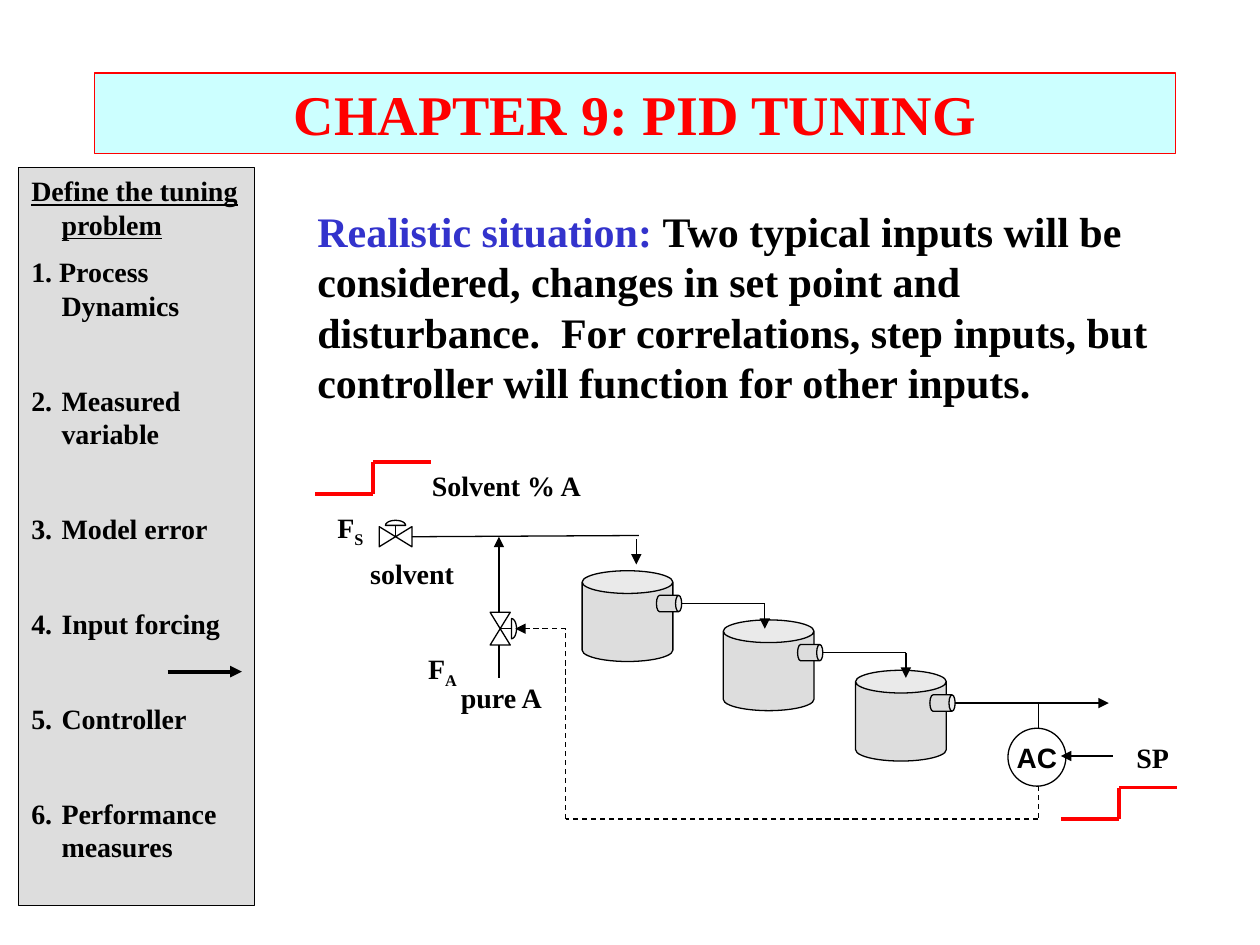
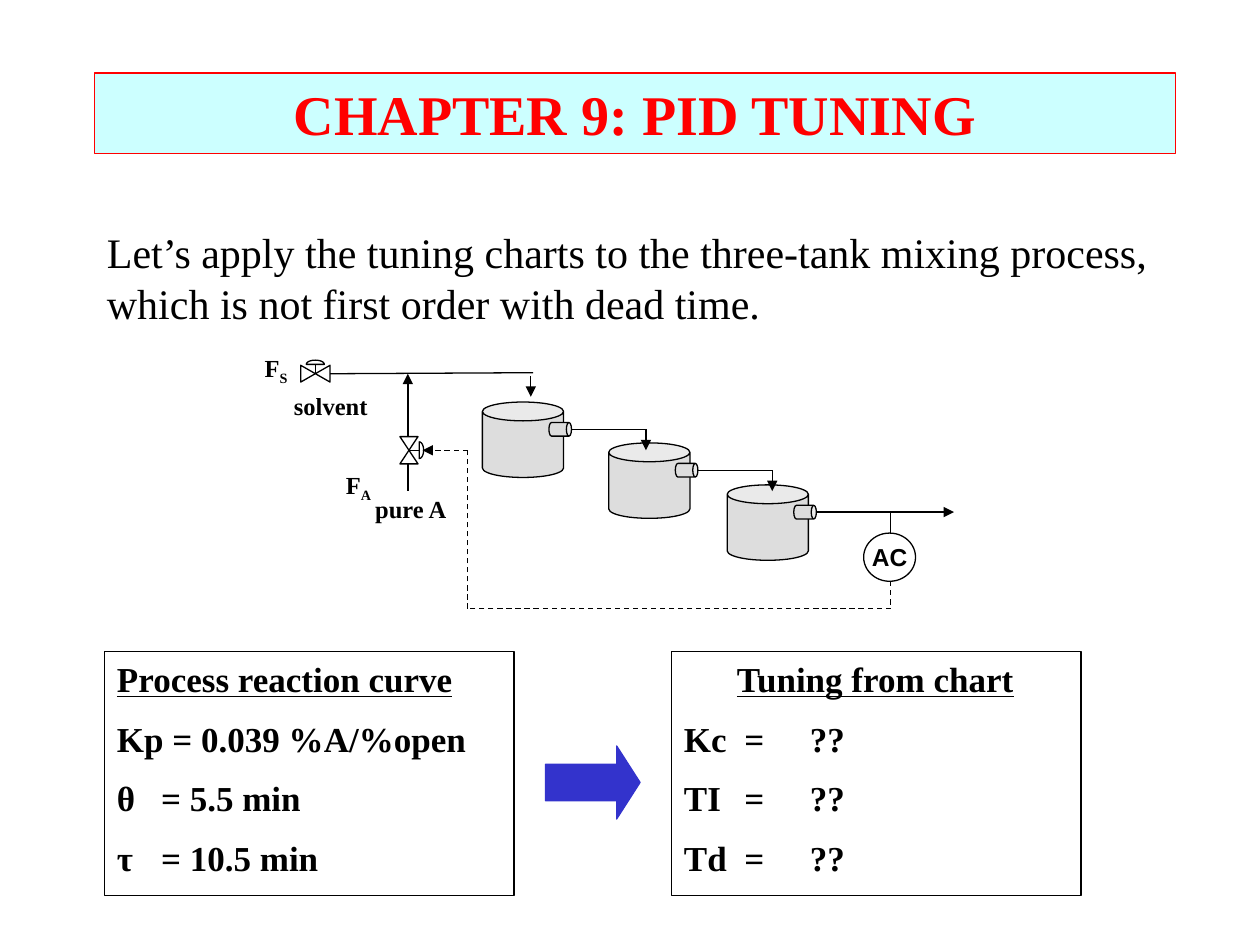
from dataclasses import dataclass
from itertools import pairwise
from math import cos, pi, sin

from lxml.etree import SubElement
from pptx import Presentation
from pptx.dml.color import RGBColor
from pptx.enum.dml import MSO_LINE
from pptx.enum.shapes import MSO_CONNECTOR, MSO_SHAPE as Shape
from pptx.enum.text import MSO_ANCHOR as Anchor, PP_ALIGN as Align
from pptx.oxml.ns import qn
from pptx.util import Inches, Pt

BLACK = RGBColor(0, 0, 0)
RED = RGBColor(0xFF, 0, 0)
BLUE = RGBColor(0x33, 0x33, 0xCC)
GREY = RGBColor(0xDD, 0xDD, 0xDD)
CYAN = RGBColor(0xCC, 0xFF, 0xFF)
SERIF, SANS = "Times New Roman", "Arial"
THIN, THICK = 0.75, 2.25


@dataclass
class Frame:
    """A rectangle of the slide, in inches, ruled into columns and rows."""
    left: float
    top: float
    width: float
    height: float
    columns: float
    rows: float

    def point(self, x, y):
        return (Inches(self.left + x * self.width / self.columns),
                Inches(self.top + y * self.height / self.rows))

    def size(self, width, height):
        return (Inches(width * self.width / self.columns),
                Inches(height * self.height / self.rows))


SHEET = Frame(0, 0, 10, 7.5, 10, 7.5)
PLANT_GRID = (6.5, 2.5)
TANK_SIDE = 0.72
TANKS = [(2.12, 0.53), (3.24, 0.92), (4.29, 1.32)]
OUTLET_END = (6.3, 1.58)
SIDEBAR_ITEMS = ["1. Process Dynamics", "2.\tMeasured variable", "3.\tModel error",
                 "4.\tInput forcing", "5.\tController", "6.\tPerformance measures"]


def style_line(line, color=BLACK, weight=THIN):
    line.color.rgb = color
    line.width = Pt(weight)


def add_block(slide, frame, kind, at, fill=None, line=BLACK):
    x, y, width, height = at
    block = slide.shapes.add_shape(kind, *frame.point(x, y), *frame.size(width, height))
    block.shadow.inherit = False
    if fill is None:
        block.fill.background()
    else:
        block.fill.solid()
        block.fill.fore_color.rgb = fill
    style_line(block.line, line)
    return block


def add_path(slide, frame, points, color=BLACK, weight=THIN, dashed=False, arrow=False):
    """Join the points with straight connectors; an arrowhead goes on the last."""
    for start, end in pairwise(points):
        piece = slide.shapes.add_connector(
            MSO_CONNECTOR.STRAIGHT, *frame.point(*start), *frame.point(*end))
        style_line(piece.line, color, weight)
        SubElement(piece._element.spPr, qn("a:effectLst"))
        if dashed:
            piece.line.dash_style = MSO_LINE.DASH
    if arrow:
        SubElement(piece.line._get_or_add_ln(), qn("a:tailEnd"), type="triangle")


def add_outline(slide, frame, points, close):
    corners = [frame.point(*point) for point in points]
    builder = slide.shapes.build_freeform(*corners[0])
    builder.add_line_segments(corners[1:], close=close)
    outline = builder.convert_to_shape()
    outline.shadow.inherit = False
    outline.fill.background()
    style_line(outline.line)


def format_span(span, size, color=BLACK, bold=True, font=SERIF, underline=False):
    span.font.size = Pt(size)
    span.font.name = font
    span.font.bold = bold
    span.font.color.rgb = color
    span.font.underline = underline


def write(box, lines, size, anchor=Anchor.TOP, align=Align.LEFT, **look):
    text = box.text_frame
    text.word_wrap = True
    text.vertical_anchor = anchor
    text.text = "\n".join(lines)
    for number, para in enumerate(text.paragraphs):
        para.alignment = align
        if number:
            para.space_before = Pt(size / 2)
        for span in para.runs:
            format_span(span, size, **look)
    return text.paragraphs


def indent(para, left, hanging=0):
    properties = para._p.get_or_add_pPr()
    properties.set("marL", str(Inches(left)))
    properties.set("indent", str(-Inches(hanging)))


def set_tabs(para, stops):
    tabs = SubElement(para._p.get_or_add_pPr(), qn("a:tabLst"))
    for stop in stops:
        SubElement(tabs, qn("a:tab"), pos=str(Inches(stop)), algn="l")


def add_text(slide, frame, at, text, size, **look):
    x, y, width, height = at
    box = slide.shapes.add_textbox(*frame.point(x, y), *frame.size(width, height))
    return write(box, [text], size, **look)[0]


def add_label(slide, frame, x, y, text, size, subscript=""):
    para = add_text(slide, frame, (x, y, 1.5, 0.37), text, size)
    if subscript:
        span = para.add_run()
        span.text = subscript
        format_span(span, size)
        span.font._element.set("baseline", "-25000")


def add_valve(slide, plant, x, y, turned=False):
    """Draw a control valve; a turned one has its actuator on the right."""
    def place(points):
        return [(x - b, y + a) if turned else (x + a, y + b) for a, b in points]

    body = [(-0.13, -0.08), (-0.13, 0.08), (0.13, -0.08), (0.13, 0.08)]
    angles = [pi * step / 12 for step in range(13)]
    dome = [(0.08 * cos(angle), -0.09 - 0.04 * sin(angle)) for angle in angles]
    add_outline(slide, plant, place(body), close=True)
    add_outline(slide, plant, place(dome), close=True)
    add_path(slide, plant, place([(0, 0), (0, -0.09)]))


def add_tank(slide, plant, x, y):
    add_block(slide, plant, Shape.CAN, (x, y, TANK_SIDE, TANK_SIDE), GREY)


def add_spout(slide, plant, x, y):
    """Lay a small can on its side, centred on x, y."""
    spout = add_block(slide, plant, Shape.CAN, (x, y, 0.2, 0.13), GREY)
    spout.width, spout.height = spout.height, spout.width
    center_x, center_y = plant.point(x, y)
    spout.left = center_x - spout.width // 2
    spout.top = center_y - spout.height // 2
    spout.rotation = 90
    spout.adjustments[0] = 0.375


def add_plant(slide, plant, size):
    """Draw the three-tank mixing process with its analyzer controller."""
    for x, y in TANKS:
        add_tank(slide, plant, x, y)
    for number, (x, y) in enumerate(TANKS):
        add_spout(slide, plant, x + 0.69, y + 0.26)
        start = (x + 0.79, y + 0.26)
        if number < len(TANKS) - 1:
            turn = x + 1.45
            route = [start, (turn, start[1]), (turn, start[1] + 0.2)]
        else:
            route = [start, OUTLET_END]
        add_path(slide, plant, route, arrow=True)

    add_path(slide, plant, [(0.77, 0.26), (2.57, 0.25)])
    add_path(slide, plant, [(2.55, 0.28), (2.55, 0.48)], arrow=True)
    add_path(slide, plant, [(1.46, 0.86), (1.46, 0.26)], arrow=True)
    add_path(slide, plant, [(1.46, 1.12), (1.46, 1.38)])
    add_valve(slide, plant, 0.64, 0.26)
    add_valve(slide, plant, 1.47, 0.99, turned=True)

    controller = add_block(slide, plant, Shape.OVAL, (5.5, 1.78, 0.46, 0.46))
    write(controller, ["AC"], size, Anchor.MIDDLE, Align.CENTER, font=SANS)
    controller.text_frame.word_wrap = False
    add_path(slide, plant, [(5.74, 1.78), (5.74, 1.58)])
    add_path(slide, plant, [(5.74, 2.24), (5.74, 2.5), (1.99, 2.5), (1.99, 0.99), (1.59, 0.99)],
             dashed=True, arrow=True)

    add_label(slide, plant, 0.08, 0, "F", size, "S")
    add_label(slide, plant, 0.8, 1.12, "F", size, "A")
    add_label(slide, plant, 0.34, 0.37, "solvent", size)
    add_label(slide, plant, 1.06, 1.35, "pure A", size)


def add_step(slide, x, y):
    run, rise = 0.46, 0.25
    add_path(slide, SHEET, [(x, y), (x + run, y), (x + run, y - rise), (x + 2 * run, y - rise)],
             RED, THICK)


def add_sidebar(slide):
    panel = add_block(slide, SHEET, Shape.RECTANGLE, (0.15, 1.33, 1.87, 5.86), GREY)
    heading, *items = write(panel, ["Define the tuning problem"] + SIDEBAR_ITEMS, 16)
    heading.runs[0].font.underline = True
    for para in [heading] + items:
        indent(para, 0.24, 0.24)
    for para in items[1:]:
        para.space_before = Pt(35)
    add_path(slide, SHEET, [(1.33, 5.33), (1.92, 5.33)], weight=THICK, arrow=True)


def add_data_box(slide, x, lines, stops):
    box = add_block(slide, SHEET, Shape.RECTANGLE, (x, 5.17, 3.25, 1.94))
    paras = write(box, lines, 20)
    paras[0].runs[0].font.underline = True
    for para in paras[1:]:
        set_tabs(para, stops)
    return paras


def add_chapter_page(deck):
    page = deck.slides.add_slide(deck.slide_layouts[6])
    band = add_block(page, SHEET, Shape.RECTANGLE, (0.75, 0.58, 8.58, 0.64), CYAN, RED)
    write(band, ["CHAPTER 9: PID TUNING"], 32, align=Align.CENTER, color=RED)
    return page


def build_situation(deck):
    page = add_chapter_page(deck)
    add_sidebar(page)
    para = add_text(page, SHEET, (2.42, 1.58, 6.92, 1.7), "Realistic situation: ", 24, color=BLUE)
    span = para.add_run()
    span.text = ("Two typical inputs will be considered, changes in set point and disturbance.  "
                 "For correlations, step inputs, but controller will function for other inputs.")
    format_span(span, 24)
    add_plant(page, Frame(2.5, 4, 6.5, 2.5, *PLANT_GRID), 16)
    add_step(page, 2.5, 3.92)
    add_label(page, SHEET, 3.33, 3.67, "Solvent % A", 16)
    add_step(page, 8.42, 6.5)
    add_path(page, SHEET, [(8.83, 6), (8.42, 6)], arrow=True)
    add_text(page, SHEET, (8.92, 5.83, 0.6, 0.37), "SP", 16)


def build_tuning(deck):
    page = add_chapter_page(deck)
    add_plant(page, Frame(1.93, 2.75, 5.82, 2.08, *PLANT_GRID), 14)
    add_text(page, SHEET, (0.75, 1.75, 8.58, 0.9),
             "Let’s apply the tuning charts to the three-tank mixing process, "
             "which is not first order with dead time.", 24, bold=False)
    add_data_box(page, 0.83, ["Process reaction curve", "Kp = 0.039 %A/%open",
                              "θ\t= 5.5 min", "τ\t= 10.5 min"], [0.35])
    heading = add_data_box(page, 5.33, ["Tuning from chart", "Kc\t=\t??",
                                        "TI\t=\t??", "Td\t=\t??"], [0.48, 1])[0]
    indent(heading, 0.42)
    arrow = add_block(page, SHEET, Shape.RIGHT_ARROW, (4.33, 5.92, 0.75, 0.58), BLUE, BLUE)
    arrow.adjustments[1] = 0.32


def main():
    deck = Presentation()
    deck.slide_width, deck.slide_height = Inches(SHEET.width), Inches(SHEET.height)
    build_situation(deck)
    build_tuning(deck)
    deck.save("out.pptx")


if __name__ == "__main__":
    main()
